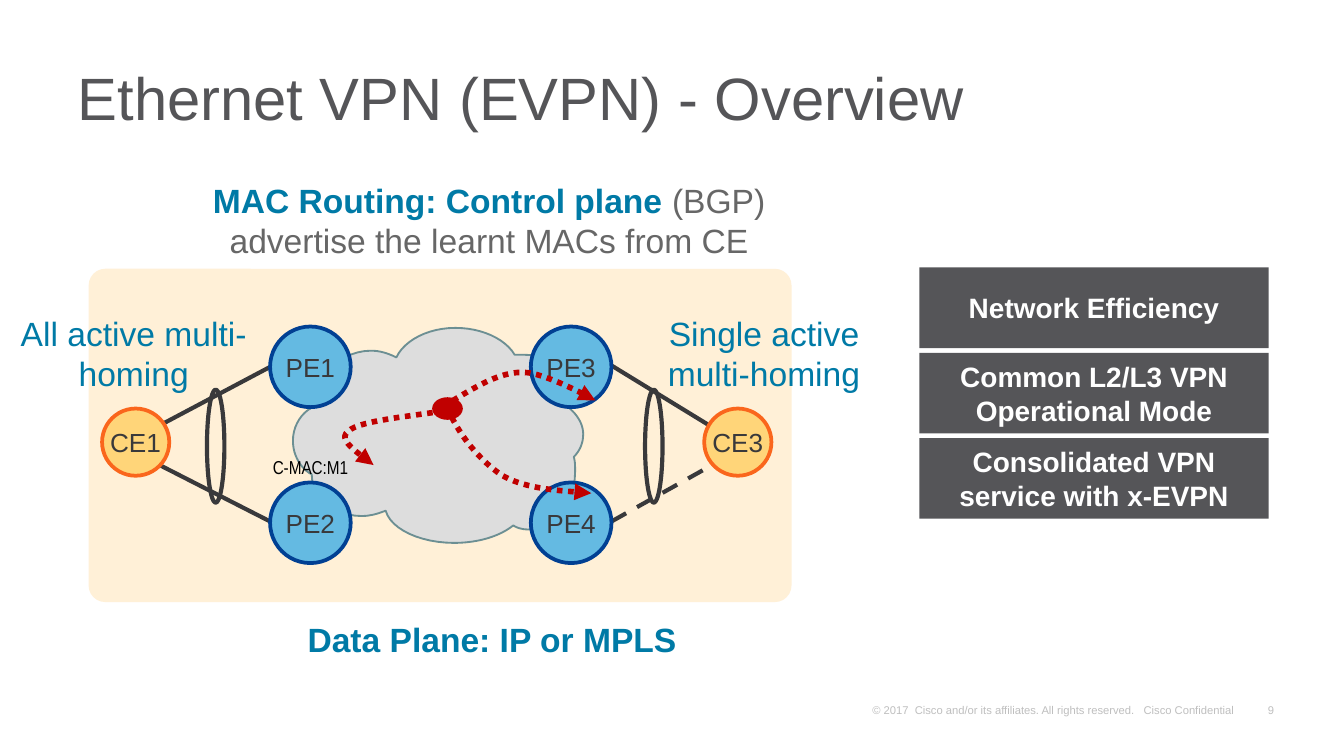
from lxml import etree
from pptx import Presentation
from pptx import util as u
from pptx.dml.color import RGBColor
from pptx.enum import dml, shapes, text
from pptx.oxml.ns import qn

THEME = {
    "font": "Arial", "narrow": "Arial Narrow",
    "title": "555558", "accent": "007AA6", "body": "676767", "ink": "39393B",
    "black": "000000", "white": "FFFFFF", "footer": "BFBFBF", "box": "555558",
    "panel": "FFECCC", "cloud": "DDDDDD", "cloud_line": "6C8F93",
    "pe": "64BAE2", "pe_line": "014093", "ce": "FFD579", "ce_line": "FA661C",
    "route": "C00000",
    "title_size": 32, "label_size": 18, "box_size": 15, "node_size": 14,
    "mac_size": 10, "footer_size": 6,
}
LEFT, CENTER, RIGHT = text.PP_ALIGN.LEFT, text.PP_ALIGN.CENTER, text.PP_ALIGN.RIGHT
TOP, MIDDLE, BOTTOM = (text.MSO_ANCHOR.TOP, text.MSO_ANCHOR.MIDDLE,
                       text.MSO_ANCHOR.BOTTOM)
WIDE, SMALL, TIGHT = (0.1, 0.05), (0.07, 0.03), (0.06, 0.03)

# Content: runs as (text, colour, bold), box, size, font, alignment, anchor, insets, wrap
TITLE = ([("Ethernet VPN (EVPN) - Overview", "title", False)], (0.48, 0.37, 9.13, 0.8),
         "title_size", "font", LEFT, MIDDLE, WIDE, True)
LABELS = [
    ([("Single active multi-homing", "accent", False)], (4.8, 2.28, 1.77, 0.71),
     "label_size", "font", CENTER, TOP, WIDE, True),
    ([("All active multi-homing", "accent", False)], (-0.04, 2.28, 2.07, 0.71),
     "label_size", "font", CENTER, TOP, WIDE, True),
    ([("MAC Routing: Control plane ", "accent", True),
      ("(BGP) advertise the learnt MACs from CE", "body", False)],
     (1.11, 1.29, 5.06, 0.71), "label_size", "font", CENTER, TOP, WIDE, True),
    ([("Data Plane: IP or MPLS", "accent", True)], (2.19, 4.56, 3.05, 0.4),
     "label_size", "font", LEFT, TOP, WIDE, True),
]
MAC_LABEL = ([("C-MAC:M1", "black", False)], (1.97, 3.36, 0.7, 0.23),
             "mac_size", "narrow", LEFT, TOP, TIGHT, True)
FOOTER = [
    ([("9", "footer", False)], (9.31, 5.19, 0.24, 0.17),
     "footer_size", "font", RIGHT, BOTTOM, SMALL, False),
    ([("© 2017  Cisco and/or its affiliates. All rights reserved.   Cisco Confidential",
       "footer", False)], (6.42, 5.19, 2.91, 0.17),
     "footer_size", "font", LEFT, BOTTOM, SMALL, True),
]
BENEFITS = ["Network Efficiency", "Common L2/L3 VPN Operational Mode",
            "Consolidated VPN service with x-EVPN"]
BENEFIT_TOP, BENEFIT_BOTTOM = 1.99, 3.26  # tops of the first and last box
PE_NODES = [("PE1", 2.01, 2.43), ("PE2", 2.01, 3.59),
            ("PE3", 3.95, 2.43), ("PE4", 3.95, 3.59)]
CE_NODES = [("CE1", 0.76, 3.04), ("CE3", 5.24, 3.04)]
LINKS = [  # start, end, dashed
    ((1.01, 3.26), (2.01, 2.73), False), ((1.01, 3.37), (2.01, 3.88), False),
    ((4.55, 3.88), (5.46, 3.37), True), ((4.55, 2.72), (5.53, 3.32), False),
]
BUNDLE_LEFTS = [1.54, 4.8]

# Curves: a start point, then (control, control, end) for each cubic
CLOUD = ((2.4, 3.01), [
    ((2.39, 2.99), (2.39, 2.97), (2.39, 2.94)), ((2.39, 2.76), (2.56, 2.61), (2.76, 2.61)),
    ((2.83, 2.61), (2.89, 2.63), (2.95, 2.66)), ((3.01, 2.53), (3.19, 2.44), (3.39, 2.44)),
    ((3.58, 2.44), (3.76, 2.52), (3.83, 2.64)), ((3.85, 2.64), (3.87, 2.64), (3.9, 2.64)),
    ((4.09, 2.64), (4.24, 2.75), (4.24, 2.89)), ((4.24, 2.93), (4.23, 2.98), (4.2, 3.01)),
    ((4.29, 3.07), (4.34, 3.15), (4.34, 3.23)), ((4.34, 3.29), (4.32, 3.35), (4.27, 3.4)),
    ((4.28, 3.43), (4.28, 3.47), (4.28, 3.51)), ((4.28, 3.75), (4.12, 3.94), (3.93, 3.94)),
    ((3.89, 3.94), (3.85, 3.93), (3.82, 3.91)), ((3.72, 3.99), (3.56, 4.04), (3.38, 4.04)),
    ((3.13, 4.04), (2.91, 3.94), (2.87, 3.8)), ((2.82, 3.82), (2.76, 3.84), (2.69, 3.84)),
    ((2.49, 3.84), (2.32, 3.7), (2.32, 3.53)), ((2.24, 3.49), (2.18, 3.39), (2.18, 3.28)),
    ((2.18, 3.14), (2.28, 3.02), (2.4, 3.01)),
])
ROUTES = [
    ((3.37, 2.98), [((3.54, 2.88), (3.71, 2.77), (3.89, 2.77)),
                    ((4.06, 2.77), (4.43, 2.98), (4.43, 2.98))]),
    ((3.33, 3.03), [((3.4, 3.22), (3.57, 3.43), (3.74, 3.54)),
                    ((3.92, 3.64), (4.15, 3.65), (4.4, 3.67))]),
    ((3.22, 3.07), [((2.94, 3.11), (2.66, 3.14), (2.59, 3.21)),
                    ((2.51, 3.27), (2.65, 3.36), (2.78, 3.46))]),
]


def color(name):
    return RGBColor.from_string(THEME[name])


def style(shape, fill=None, line=None, width=1):
    shape.shadow.inherit = False
    if fill:
        shape.fill.solid()
        shape.fill.fore_color.rgb = color(fill)
    else:
        shape.fill.background()
    if line:
        shape.line.color.rgb = color(line)
        shape.line.width = u.Pt(width)
    else:
        shape.line.fill.background()


def set_font(font, size, name, fill, bold):
    font.size, font.name, font.bold = u.Pt(THEME[size]), THEME[name], bold
    font.color.rgb = color(fill)


def write(shape, runs, size, name="font", align=CENTER, anchor=MIDDLE, insets=WIDE, wrap=True):
    frame = shape.text_frame
    frame.word_wrap, frame.vertical_anchor = wrap, anchor
    frame.margin_left = frame.margin_right = u.Inches(insets[0])
    frame.margin_top = frame.margin_bottom = u.Inches(insets[1])
    paragraph = frame.paragraphs[0]
    paragraph.alignment = align
    for words, fill, bold in runs:
        run = paragraph.add_run()
        run.text = words
        target = paragraph if len(runs) == 1 else run
        set_font(target.font, size, name, fill, bold)
    return paragraph


def add_label(slide, label):
    runs, box, *layout = label
    return write(slide.shapes.add_textbox(*map(u.Inches, box)), runs, *layout)


def add_preset(slide, kind, box, fill=None, line=None, width=1):
    shape = slide.shapes.add_shape(kind, *map(u.Inches, box))
    style(shape, fill, line, width)
    return shape


def add_node(slide, name, left, top, size, fill):
    node = add_preset(slide, shapes.MSO_SHAPE.OVAL, (left, top, size, size),
                      fill, fill + "_line", 2)
    write(node, [(name, "ink", False)], "node_size", wrap=False)


def add_curve(slide, curve, close, steps=12):
    start, cubics = curve
    points, here = [], start
    for cubic in cubics:
        for step in range(1, steps + 1):
            t = step / steps
            weights = ((1 - t) ** 3, 3 * t * (1 - t) ** 2, 3 * t * t * (1 - t), t ** 3)
            points.append(tuple(u.Inches(sum(w * p[axis] for w, p in zip(weights, (here, *cubic))))
                                for axis in (0, 1)))
        here = cubic[-1]
    builder = slide.shapes.build_freeform(*map(u.Inches, start))
    builder.add_line_segments(points, close=close)
    return builder.convert_to_shape()


def main():
    presentation = Presentation()
    presentation.slide_width = u.Inches(10)
    presentation.slide_height = u.Inches(10 * 9 / 16)
    slide = presentation.slides.add_slide(presentation.slide_layouts[6])

    for label in FOOTER:
        add_label(slide, label)

    # Translucent network panel
    panel = add_preset(slide, shapes.MSO_SHAPE.ROUNDED_RECTANGLE,
                       (0.66, 2, 5.23, 2.48), "panel")
    panel.adjustments[0] = 0.05
    tint = next(panel.element.spPr.iter(qn("a:srgbClr")))
    etree.SubElement(tint, qn("a:alpha"), val="78000")

    style(add_curve(slide, CLOUD, True), "cloud", "cloud_line")
    add_label(slide, TITLE).line_spacing = 0.8

    # Links and the rings that bundle them
    for start, end, dashed in LINKS:
        link = slide.shapes.add_connector(shapes.MSO_CONNECTOR.STRAIGHT,
                                          *map(u.Inches, start + end))
        link.line.color.rgb, link.line.width = color("ink"), u.Pt(2.25)
        if dashed:
            link.line.dash_style = dml.MSO_LINE.DASH
        etree.SubElement(link.element.spPr, qn("a:effectLst"))
    for left in BUNDLE_LEFTS:
        add_preset(slide, shapes.MSO_SHAPE.OVAL, (left, 2.9, 0.13, 0.84), None, "ink", 2.25)

    for label in LABELS:
        add_label(slide, label)

    # Benefit boxes
    pitch = (BENEFIT_BOTTOM - BENEFIT_TOP) / (len(BENEFITS) - 1)
    for row, benefit in enumerate(BENEFITS):
        box = add_preset(slide, shapes.MSO_SHAPE.RECTANGLE,
                         (6.84, BENEFIT_TOP + row * pitch, 2.6, 0.6), "box")
        write(box, [(benefit, "white", True)], "box_size")

    for node in PE_NODES:
        add_node(slide, *node, 0.6, "pe")

    # Dotted route advertisements from the hub
    for curve in ROUTES:
        route = add_curve(slide, curve, False)
        style(route, None, "route", 3)
        route.line.dash_style = dml.MSO_LINE.ROUND_DOT
        line = route.element.spPr.find(qn("a:ln"))
        etree.SubElement(line, qn("a:tailEnd"), type="triangle")
    add_preset(slide, shapes.MSO_SHAPE.OVAL, (3.23, 2.97, 0.2, 0.14), "route", "route", 2)

    for node in CE_NODES:
        add_node(slide, *node, 0.5, "ce")
    add_label(slide, MAC_LABEL)

    presentation.save("out.pptx")


if __name__ == "__main__":
    main()
